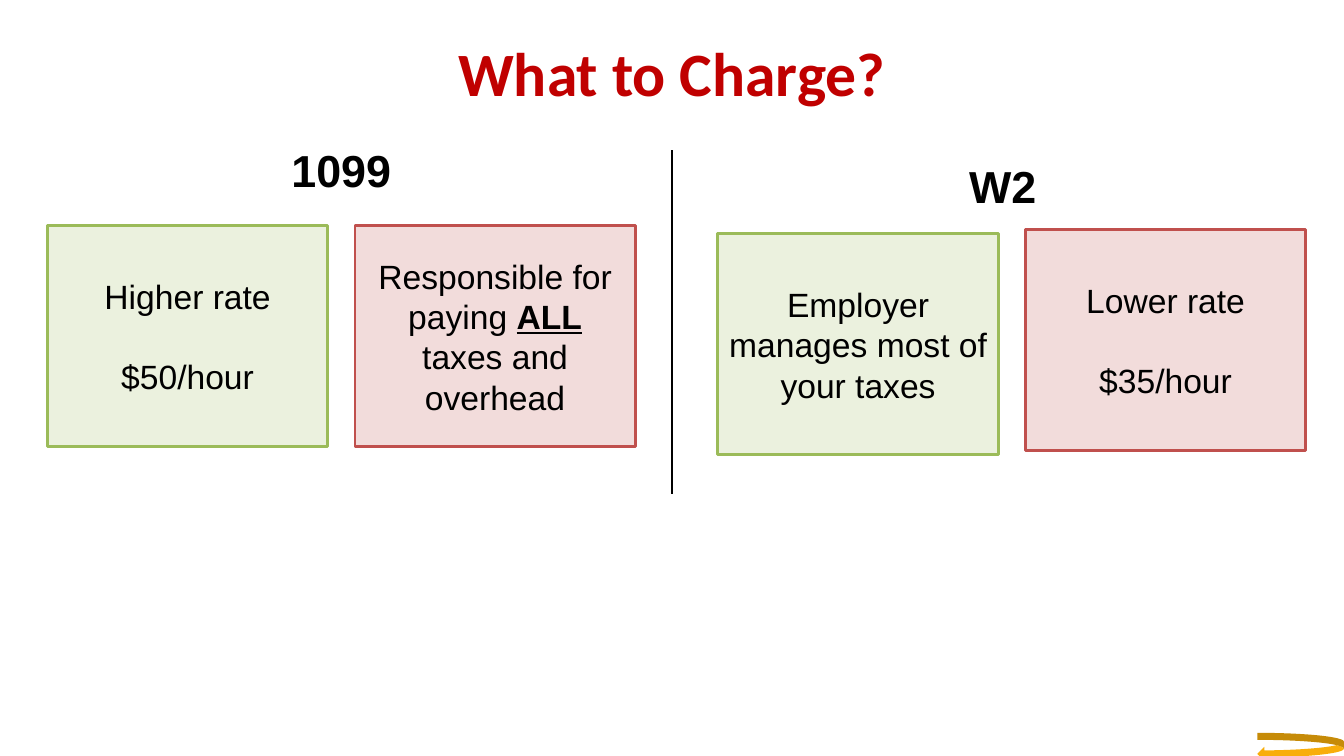
from dataclasses import dataclass
from lxml.etree import SubElement
from pptx import Presentation
from pptx.dml.color import RGBColor
from pptx.enum.shapes import MSO_CONNECTOR, MSO_SHAPE
from pptx.enum.text import MSO_ANCHOR, PP_ALIGN
from pptx.oxml.ns import qn
from pptx.util import Inches, Pt


@dataclass(frozen=True)
class Theme:
    title: str = "C00000"
    ink: str = "000000"
    gold: str = "F8AE0B"
    good: tuple = ("EBF1DE", "9BBB59")
    bad: tuple = ("F2DCDB", "C0504D")
    head: int = 44
    sub: int = 32
    body: int = 24
    gap: int = 28


theme = Theme()


def write(frame, paras, size, color=theme.ink, font="Arial", bold=False):
    frame.word_wrap = True
    for i, runs in enumerate(paras):
        para = frame.add_paragraph() if i else frame.paragraphs[0]
        para.alignment = PP_ALIGN.CENTER
        if i:
            para.space_before = Pt(theme.gap)
        for text, strong in runs:
            run = para.add_run()
            run.text = text
            run.font.name = font
            run.font.size = Pt(size)
            run.font.bold = bold or strong
            run.font.underline = strong
            run.font.color.rgb = RGBColor.from_string(color)


def draw(kind, left, top, width, height, fill, line=None):
    shape = slide.shapes.add_shape(
        kind, Inches(left), Inches(top), Inches(width), Inches(height))
    shape.shadow.inherit = False
    shape.fill.solid()
    shape.fill.fore_color.rgb = RGBColor.from_string(fill)
    if line:
        shape.line.color.rgb = RGBColor.from_string(line)
        shape.line.width = Pt(2)
    else:
        shape.line.fill.background()
    return shape


deck = Presentation()
deck.slide_width = Inches(13.33)
deck.slide_height = Inches(7.5)
slide = deck.slides.add_slide(deck.slide_layouts[5])
mid = deck.slide_width // 2

title = slide.shapes.title
title.width, title.height = Inches(10), Inches(0.84)
title.left, title.top = mid - title.width // 2, Inches(0.29)
title.text_frame.vertical_anchor = MSO_ANCHOR.MIDDLE
write(title.text_frame, [[("What to Charge?", False)]],
      theme.head, theme.title, "Calibri", True)

draw(MSO_SHAPE.CURVED_LEFT_ARROW, 12.47, 7.27, 0.86, 0.28, theme.gold)

rule = slide.shapes.add_connector(
    MSO_CONNECTOR.STRAIGHT, mid, Inches(1.49), mid, Inches(4.9))
rule.line.color.rgb = RGBColor.from_string(theme.ink)
rule.line.width = Pt(0.75)
SubElement(rule._element.spPr, qn("a:effectLst"))

wide, tall, step = 2.78, 2.19, 3.05
sides = [
    ("1099", 0.3, 1.37, 0.47, [
        (2.24, [[("Higher rate", False)], [("$50/hour", False)]]),
        (2.24, [[("Responsible for paying ", False), ("ALL", True),
                 (" taxes and overhead", False)]]),
    ]),
    ("W2", 6.86, 1.53, 7.12, [
        (2.32, [[("Employer manages most of your taxes", False)]]),
        (2.28, [[("Lower rate", False)], [("$35/hour", False)]]),
    ]),
]
for name, left, top, start, cards in sides:
    label = slide.shapes.add_textbox(
        Inches(left), Inches(top), Inches(6.17), Inches(0.64))
    write(label.text_frame, [[(name, False)]], theme.sub, bold=True)
    for col, (y, paras) in enumerate(cards):
        fill, line = (theme.good, theme.bad)[col]
        card = draw(MSO_SHAPE.RECTANGLE, start + col * step, y,
                    wide, tall, fill, line)
        card.text_frame.vertical_anchor = MSO_ANCHOR.MIDDLE
        write(card.text_frame, paras, theme.body)

deck.save("out.pptx")
